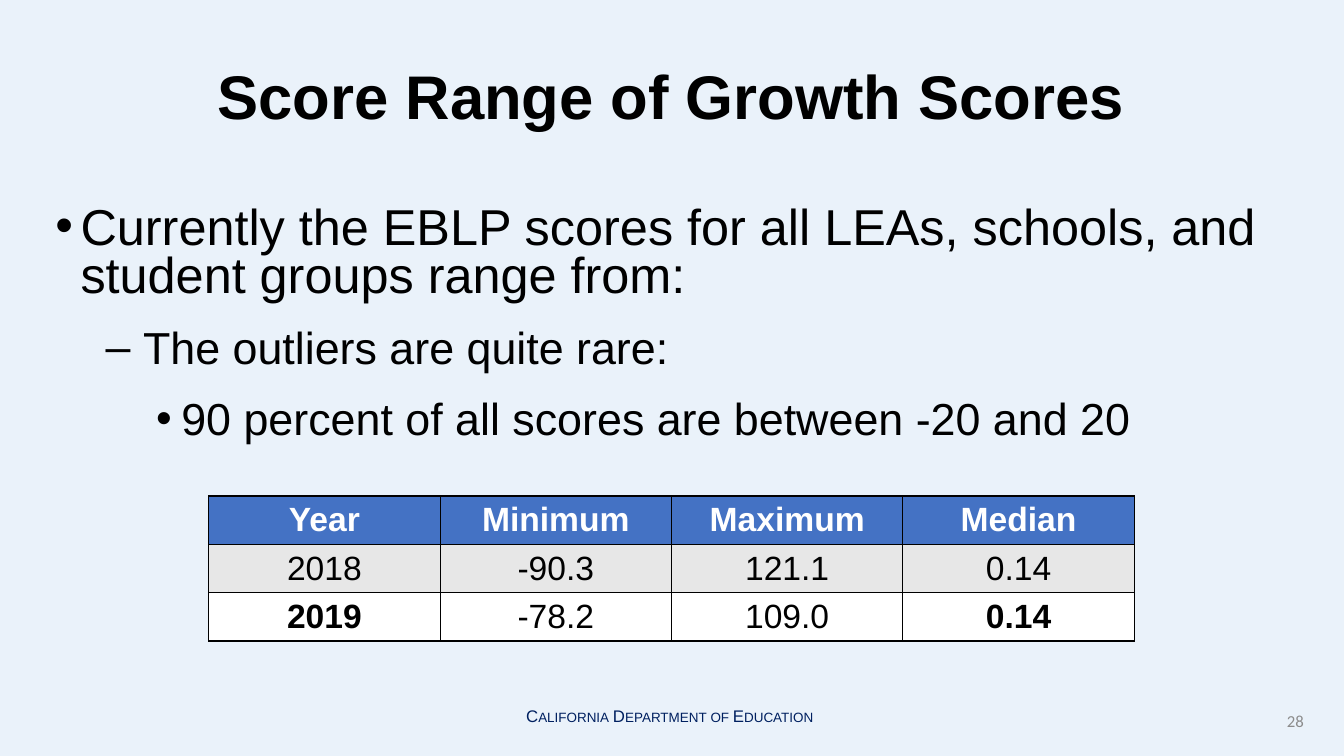
from lxml import etree
from pptx import Presentation
from pptx.dml.color import RGBColor
from pptx.enum import text
from pptx.oxml.ns import qn
from pptx.util import Inches, Pt

BACKGROUND = RGBColor(0xEA, 0xF2, 0xFA)
BLACK = RGBColor(0, 0, 0)
WHITE = RGBColor(0xFF, 0xFF, 0xFF)
NAVY = RGBColor(0x00, 0x20, 0x60)
BLUE = RGBColor(0x44, 0x72, 0xC4)
BAND = RGBColor(0xE7, 0xE7, 0xE7)
GRAY = RGBColor(0x8C, 0x8C, 0x8C)


def add_box(left, top, width, height, anchor=text.MSO_ANCHOR.TOP):
    sp = slide.shapes.add_textbox(Inches(left), Inches(top), Inches(width), Inches(height))
    tf = sp.text_frame
    tf.word_wrap = True
    tf.vertical_anchor = anchor
    return tf


def add_run(p, words, size, color, bold=False, font="Arial"):
    r = p.add_run()
    r.text = words
    r.font.name = font
    r.font.size = Pt(size)
    r.font.bold = bold
    r.font.color.rgb = color
    return r


prs = Presentation()
prs.slide_width, prs.slide_height = Inches(13.33), Inches(7.5)
slide = prs.slides.add_slide(prs.slide_layouts[6])
slide.background.fill.solid()
slide.background.fill.fore_color.rgb = BACKGROUND

# Footer
tf = add_box(5.12, 6.95, 3.09, 0.3)
tf.word_wrap = False
r = add_run(tf.paragraphs[0], "California Department of Education", 12, NAVY)
r.font._element.set("cap", "small")

# Title
tf = add_box(0.45, 0.18, 12.42, 1.62, text.MSO_ANCHOR.MIDDLE)
p = tf.paragraphs[0]
p.alignment = text.PP_ALIGN.CENTER
p.line_spacing = 0.9
add_run(p, "Score Range of Growth Scores", 44, BLACK, bold=True)

# Bullets: level, indent, hanging, line spacing, mark, size, words
bullets = [
    (0, 0.25, 0.25, 0.8, "•", 36,
     "Currently the EBLP scores for all LEAs, schools, and student groups range from:"),
    (1, 0.87, 0.37, 1.0, "‒", 32, "The outliers are quite rare:"),
    (2, 1.25, 0.25, 1.0, "•", 32, "90 percent of all scores are between -20 and 20"),
]
tf = add_box(0.45, 2, 12.42, 2.71)
for i, (level, indent, hanging, spacing, mark, size, words) in enumerate(bullets):
    p = tf.add_paragraph() if i else tf.paragraphs[0]
    p.level = level
    p.line_spacing = spacing
    p.space_before = p.space_after = Pt(6)
    pPr = p._p.get_or_add_pPr()
    pPr.set("marL", str(Inches(indent)))
    pPr.set("indent", str(-Inches(hanging)))
    etree.SubElement(pPr, qn("a:buFont"), typeface="Arial")
    etree.SubElement(pPr, qn("a:buChar"), char=mark)
    add_run(p, words, size, BLACK)

# Score table
scores = [
    ("Year", "Minimum", "Maximum", "Median"),
    ("2018", "-90.3", "121.1", "0.14"),
    ("2019", "-78.2", "109.0", "0.14"),
]
fills = [BLUE, BAND, WHITE]
bold_cells = {(2, 0), (2, 3)}
table = slide.shapes.add_table(3, 4, Inches(2.07), Inches(4.92), Inches(9.18), Inches(1.41)).table
for row, values in enumerate(scores):
    for col, value in enumerate(values):
        cell = table.cell(row, col)
        cell.margin_top = cell.margin_bottom = Inches(0.04)
        cell.vertical_anchor = text.MSO_ANCHOR.MIDDLE
        p = cell.text_frame.paragraphs[0]
        p.alignment = text.PP_ALIGN.CENTER
        header = row == 0
        add_run(p, value, 24, WHITE if header else BLACK, header or (row, col) in bold_cells)
        # Borders come before the fill in the cell properties
        tcPr = cell._tc.get_or_add_tcPr()
        for side in ("a:lnL", "a:lnR", "a:lnT", "a:lnB"):
            ln = etree.SubElement(tcPr, qn(side), w=str(Pt(1)))
            solid = etree.SubElement(ln, qn("a:solidFill"))
            etree.SubElement(solid, qn("a:srgbClr"), val=str(BLACK))
        cell.fill.solid()
        cell.fill.fore_color.rgb = fills[row]

# Slide number
tf = add_box(10.03, 6.95, 3, 0.4, text.MSO_ANCHOR.MIDDLE)
p = tf.paragraphs[0]
p.alignment = text.PP_ALIGN.RIGHT
add_run(p, "28", 12, GRAY, font="Calibri")

prs.save("out.pptx")
